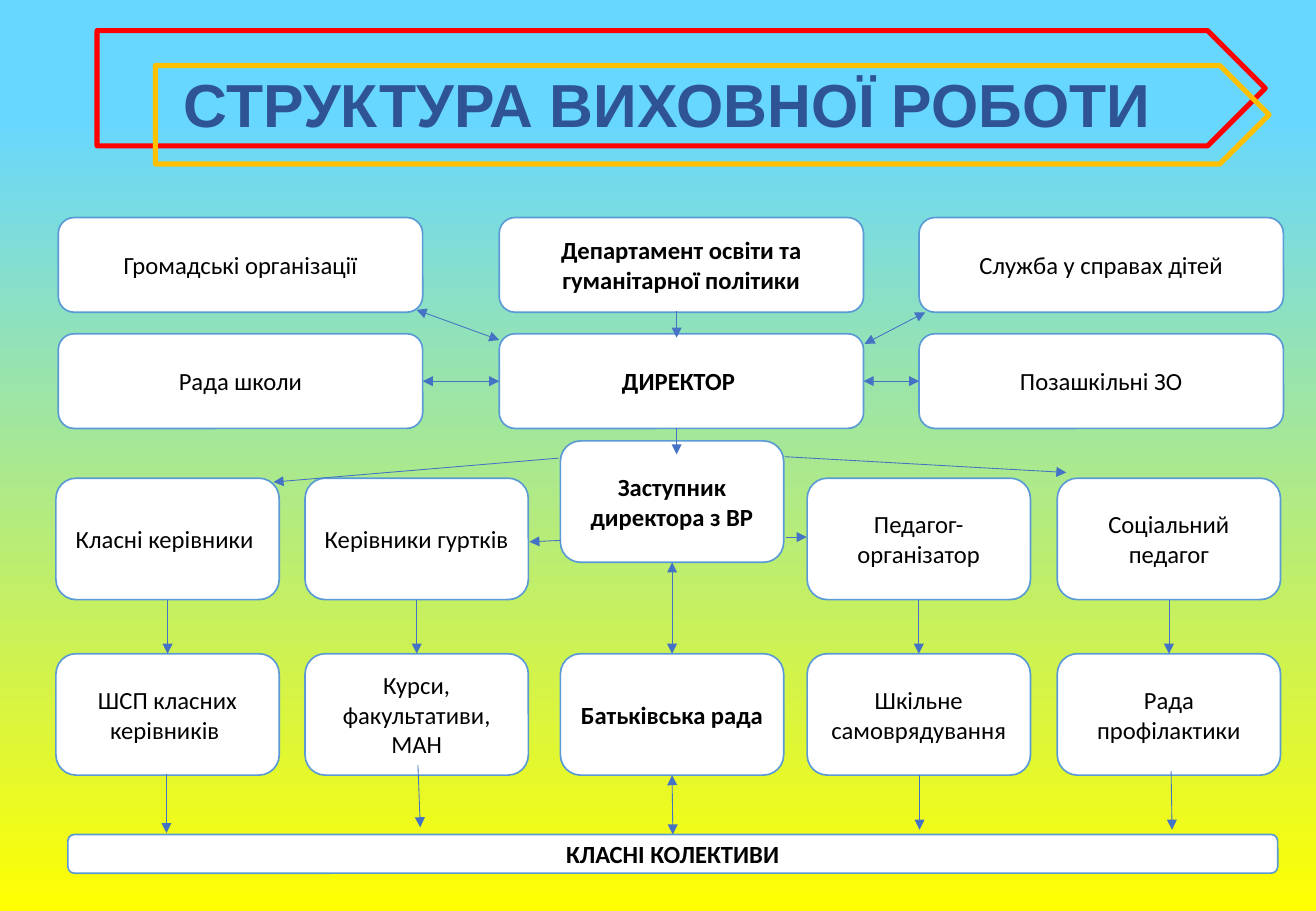
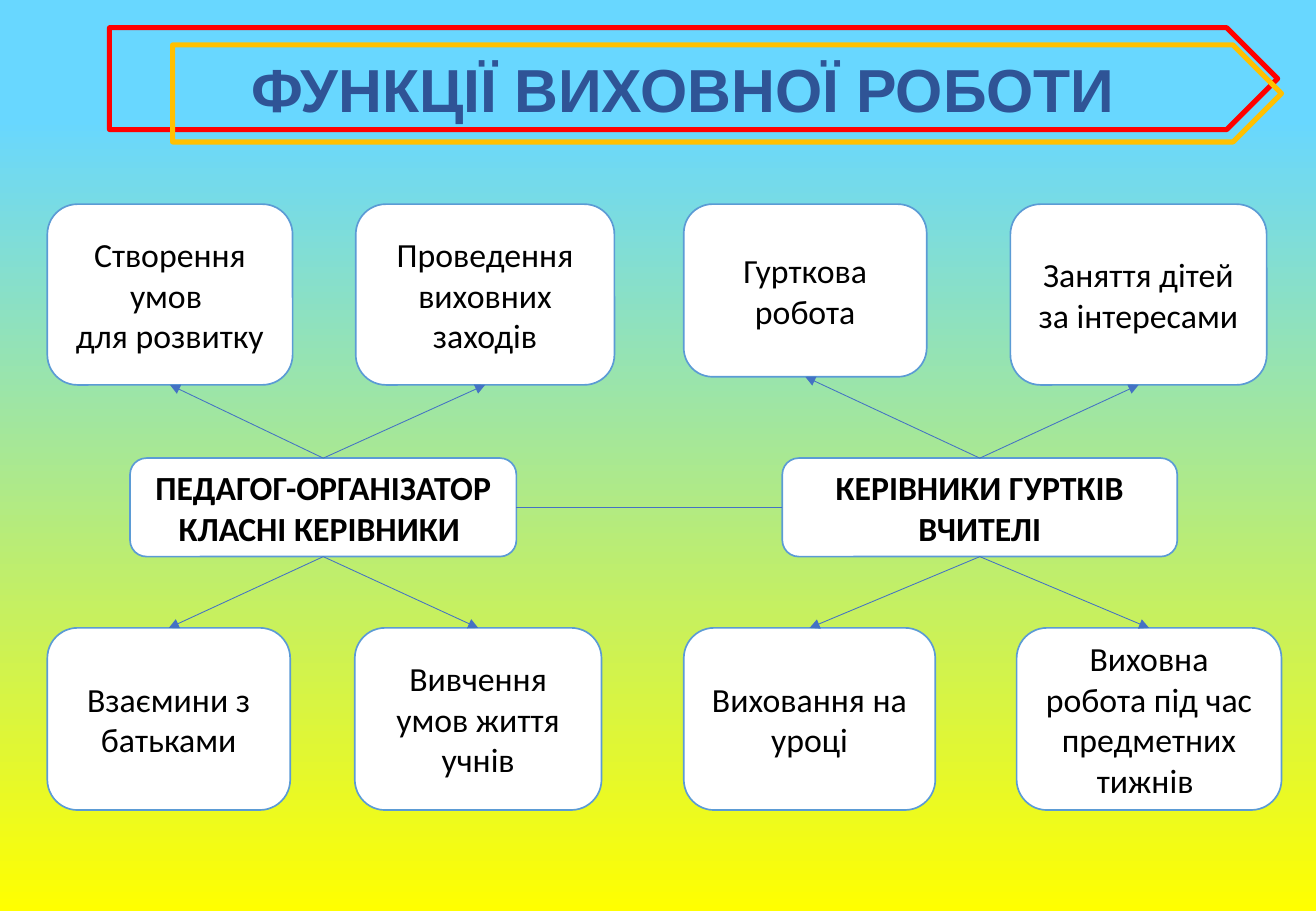
from lxml import etree
from pptx import Presentation
from pptx.dml.color import RGBColor
from pptx.enum.shapes import MSO_CONNECTOR, MSO_SHAPE
from pptx.enum.text import MSO_ANCHOR, MSO_AUTO_SIZE, PP_ALIGN
from pptx.oxml.ns import qn
from pptx.util import Cm, Pt

STRAIGHT = MSO_CONNECTOR.STRAIGHT
ROUNDED = MSO_SHAPE.ROUNDED_RECTANGLE
PENTAGON = MSO_SHAPE.PENTAGON
MIDDLE = MSO_ANCHOR.MIDDLE
CENTER = PP_ALIGN.CENTER
NO_FIT = MSO_AUTO_SIZE.NONE

SKY, YELLOW, WHITE, BLACK = "68D7FF", "FFFF00", "FFFFFF", "000000"
RED, GOLD, NAVY = "FF0000", "FFC000", "2F5496"
BOX_LINE, ARROW = "5B9BD5", "4472C4"
TOP, LEFT, BOTTOM, RIGHT = range(4)

STRUCTURE_TITLE = {
    "text": "СТРУКТУРА ВИХОВНОЇ РОБОТИ",
    "place": (2.57, 1.6, 22.78, 1.32),
    "plates": [(2.03, 0.64, 24.43, 2.41), (3.25, 1.37, 23.29, 2.06)],
}
FUNCTIONS_TITLE = {
    "text": "ФУНКЦІЇ ВИХОВНОЇ РОБОТИ",
    "place": (2.9, 1.14, 22.78, 1.6),
    "plates": [(2.29, 0.58, 24.43, 2.13), (3.61, 0.94, 23.19, 2.03)],
}

AUTHORITY_LEFTS = (1.22, 10.44, 19.22)
AUTHORITY_SIZE = (7.62, 1.98)
AUTHORITY_ROWS = [
    (4.55, ["Громадські організації", "Департамент освіти та гуманітарної політики",
            "Служба у справах дітей"]),
    (6.98, ["Рада школи", "ДИРЕКТОР ", "Позашкільні ЗО"]),
]
STAFF_LEFTS = (1.17, 6.38, 11.72, 16.88, 22.11)
STAFF_SIZE = (4.67, 2.54)
STAFF_TOP, DEPUTY_TOP, COUNCIL_TOP = 10, 9.22, 13.67
STAFF = ["Класні керівники ", "Керівники гуртків", "Заступник директора з ВР",
         "Педагог-організатор", "Соціальний педагог"]
COUNCILS = ["ШСП класних керівників ", "Курси, факультативи, МАН", "Батьківська рада",
            "Шкільне самоврядування", "Рада профілактики"]
CLASSES = ("КЛАСНІ КОЛЕКТИВИ", (1.42, 17.45, 25.3, 0.81))

ONE_WAY_ARROWS = [
    ((14.15, 6.5), (14.15, 7.06)),
    ((14.15, 8.94), (14.15, 9.5)),
    ((16.41, 9.55), (22.3, 9.88)),
    ((11.68, 9.58), (5.72, 10.08)),
    ((16.43, 11.23), (16.87, 11.23)),
    ((11.73, 11.3), (11.07, 11.33)),
    ((3.48, 16.18), (3.48, 17.42)),
    ((8.74, 16), (8.79, 17.3)),
    ((19.23, 16.21), (19.23, 17.35)),
    ((24.49, 16.13), (24.51, 17.35)),
]
TWO_WAY_ARROWS = [
    ((19.35, 6.53), (18.08, 7.19)),
    ((10.44, 7.11), (8.71, 6.48)),
]

UPPER_TOP, GROUP_TOP, LOWER_TOP = 4.27, 9.58, 13.13
GROUP_HEIGHT, LOWER_HEIGHT = 2.06, 3.81
GROUPS = [
    {
        "name": ("ПЕДАГОГ-ОРГАНІЗАТОР\nКЛАСНІ КЕРІВНИКИ ", 2.72, 8.08),
        "upper": [("Створення умов \nдля розвитку", 0.99, 5.13, 3.78),
                  ("Проведення виховних заходів", 7.44, 5.41, 3.78)],
        "lower": [("Взаємини з батьками", 0.99, 5.08),
                  ("Вивчення умов життя учнів", 7.42, 5.16)],
    },
    {
        "name": ("КЕРІВНИКИ ГУРТКІВ\nВЧИТЕЛІ", 16.36, 8.26),
        "upper": [("Гурткова робота", 14.3, 5.08, 3.61),
                  ("Заняття дітей за інтересами", 21.13, 5.36, 3.78)],
        "lower": [("Виховання на уроці", 14.3, 5.26),
                  ("Виховна робота під час предметних тижнів ", 21.26, 5.54)],
    },
]


def color(value):
    return RGBColor.from_string(value)


def format_text(text_frame, font_name, size, font_color, bold):
    text_frame.word_wrap = True
    text_frame.vertical_anchor = MIDDLE
    for paragraph in text_frame.paragraphs:
        paragraph.alignment = CENTER
        for run in paragraph.runs:
            run.font.name = font_name
            run.font.size = Pt(size)
            run.font.bold = bold
            run.font.color.rgb = color(font_color)


def add_outlined(slide, preset, place, line_color, line_width):
    shape = slide.shapes.add_shape(preset, *map(Cm, place))
    shape.shadow.inherit = False
    shape.line.color.rgb = color(line_color)
    shape.line.width = Pt(line_width)
    return shape


def add_box(slide, text, place, size, bold=False):
    box = add_outlined(slide, ROUNDED, place, BOX_LINE, 1)
    box.fill.solid()
    box.fill.fore_color.rgb = color(WHITE)
    box.text_frame.text = text
    format_text(box.text_frame, "Calibri", size, BLACK, bold)
    return box


def add_line(slide, start=(0, 0), end=(0, 0), ends=("tailEnd",)):
    connector = slide.shapes.add_connector(STRAIGHT, *map(Cm, (*start, *end)))
    connector.line.color.rgb = color(ARROW)
    connector.line.width = Pt(0.5)
    properties = connector._element.spPr
    outline = properties.find(qn("a:ln"))
    for name in ends:
        etree.SubElement(outline, qn("a:" + name), type="triangle")
    etree.SubElement(properties, qn("a:effectLst"))
    return connector


def join(slide, first, first_side, second, second_side, ends=("tailEnd",)):
    connector = add_line(slide, ends=ends)
    connector.begin_connect(first, first_side)
    connector.end_connect(second, second_side)


def add_titled_slide(presentation, heading):
    slide = presentation.slides.add_slide(presentation.slide_layouts[5])
    title = slide.shapes.title
    title.left, title.top, title.width, title.height = map(Cm, heading["place"])
    title.text_frame.text = heading["text"]
    title.text_frame.auto_size = NO_FIT
    format_text(title.text_frame, "Arial", 36, NAVY, True)
    title.text_frame.paragraphs[0].line_spacing = 0.9
    for place, line_color in zip(heading["plates"], (RED, GOLD)):
        add_outlined(slide, PENTAGON, place, line_color, 3).fill.background()
    return slide


def set_background(presentation):
    fill = presentation.slide_master.background.fill
    fill.gradient()
    fill.gradient_angle = 270
    for stop, position, value in zip(fill.gradient_stops, (0.13, 1), (SKY, YELLOW)):
        stop.position = position
        stop.color.rgb = color(value)


def build_structure(presentation):
    slide = add_titled_slide(presentation, STRUCTURE_TITLE)
    both = ("headEnd", "tailEnd")
    for top, names in AUTHORITY_ROWS:
        row = [add_box(slide, name, (left, top, *AUTHORITY_SIZE), 14.6, column == 1)
               for column, (left, name) in enumerate(zip(AUTHORITY_LEFTS, names))]
    school_council, director, outside_schools = row
    join(slide, director, LEFT, school_council, RIGHT, both)
    join(slide, outside_schools, LEFT, director, RIGHT, both)

    classes = add_box(slide, *CLASSES, 14.6, True)
    for column, (left, person, council) in enumerate(zip(STAFF_LEFTS, STAFF, COUNCILS)):
        is_deputy = column == 2
        top = DEPUTY_TOP if is_deputy else STAFF_TOP
        upper = add_box(slide, person, (left, top, *STAFF_SIZE), 14.6, is_deputy)
        lower = add_box(slide, council, (left, COUNCIL_TOP, *STAFF_SIZE), 14.6, is_deputy)
        join(slide, upper, BOTTOM, lower, TOP, both if is_deputy else ("tailEnd",))
        if is_deputy:
            join(slide, lower, BOTTOM, classes, TOP, both)

    for start, end in ONE_WAY_ARROWS:
        add_line(slide, start, end)
    for start, end in TWO_WAY_ARROWS:
        add_line(slide, start, end, both)


def build_functions(presentation):
    slide = add_titled_slide(presentation, FUNCTIONS_TITLE)
    centers = []
    for group in GROUPS:
        name, left, width = group["name"]
        center = add_box(slide, name, (left, GROUP_TOP, width, GROUP_HEIGHT), 20, True)
        centers.append(center)
        for text, left, width, height in group["upper"]:
            box = add_box(slide, text, (left, UPPER_TOP, width, height), 20)
            join(slide, center, TOP, box, BOTTOM)
        for text, left, width in group["lower"]:
            box = add_box(slide, text, (left, LOWER_TOP, width, LOWER_HEIGHT), 20)
            join(slide, center, BOTTOM, box, TOP)
    join(slide, centers[0], RIGHT, centers[1], LEFT, ())


def main():
    presentation = Presentation()
    presentation.slide_width = Cm(27.52)
    presentation.slide_height = Cm(19.05)
    set_background(presentation)
    build_structure(presentation)
    build_functions(presentation)
    presentation.save("out.pptx")


if __name__ == "__main__":
    main()
